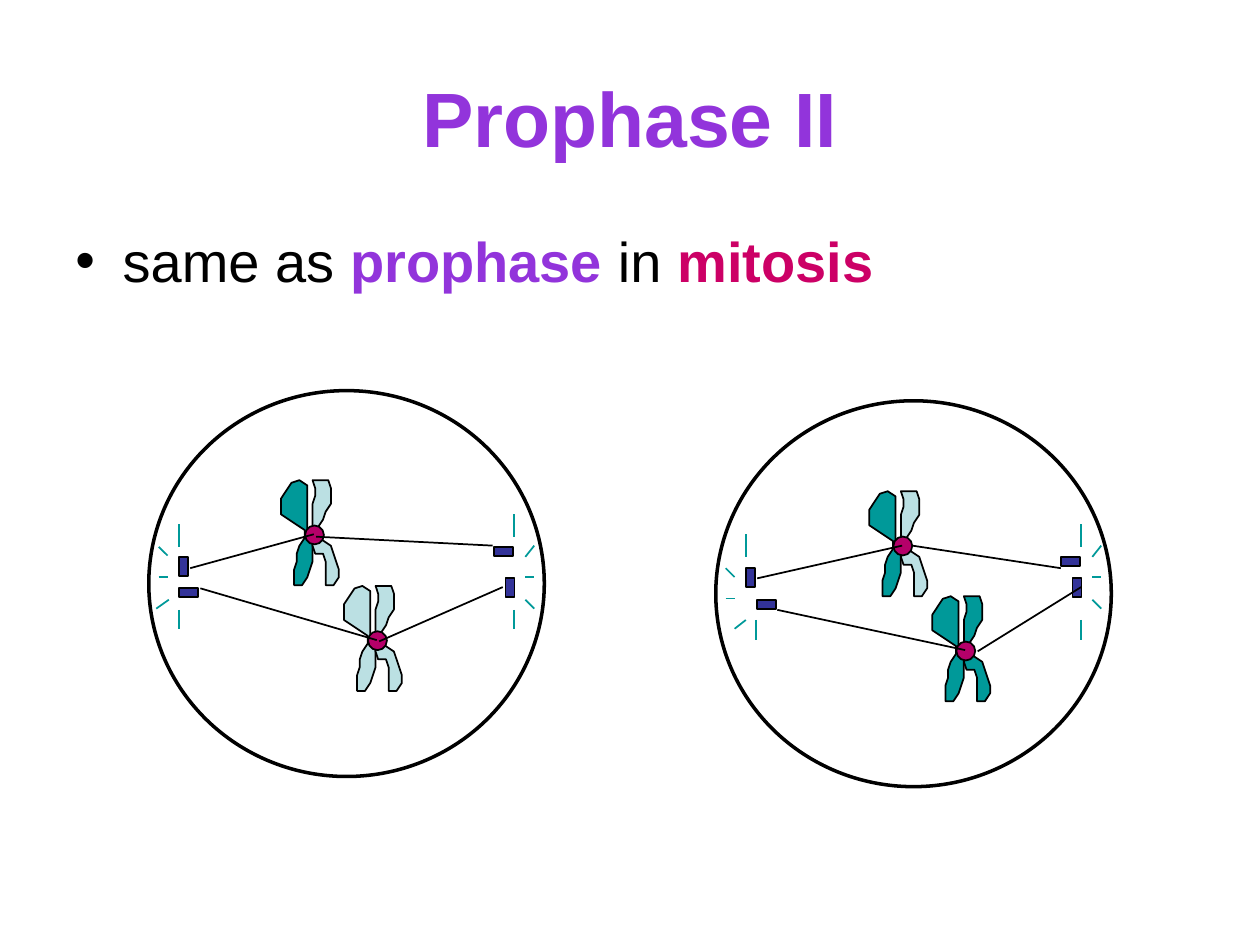
from lxml import etree
from pptx import Presentation
from pptx.dml.color import RGBColor
from pptx.enum import shapes, text
from pptx.oxml import ns
from pptx.util import Pt

FONT = "Arial"
BLACK, PURPLE, PINK = "000000", "9234DB", "CC0066"
TEAL, PALE, MAGENTA, NAVY = "009999", "BBE0E3", "B50069", "333399"

# Chromatid outlines on a grid of 1.5 points, from the chromosome's corner
GRID = 1.5
LEFT_CHROMATID = [
    (13, 21), (10, 20), (10, 2), (7, 0), (4, 1), (0, 7), (0, 13), (9, 19),
    (9, 22), (7, 25), (6, 28), (6, 31), (5, 34), (5, 40), (8, 40), (10, 37),
    (12, 31), (12, 22)]
RIGHT_CHROMATID = [
    (13, 21), (12, 18), (12, 9), (13, 6), (13, 3), (12, 0), (18, 0), (19, 3),
    (19, 9), (17, 12), (16, 15), (14, 18), (13, 21), (19, 25), (22, 34),
    (22, 37), (20, 40), (17, 40), (17, 31), (16, 28), (13, 28), (12, 25),
    (12, 22)]

# Cell contents, in points from the cell's top left corner
CELL_SIZE = (226, 220.5)
LEFT_CELL = {
    "chromosomes": [(111.6, 111.6, PALE, PALE), (75.6, 51.2, TEAL, PALE)],
    "upright": [(203.8, 107.3), (17.2, 95)],
    "flat": [(197.2, 89.3), (17.2, 113)],
    "rays": [
        (208.8, 83.5, 208.8, 70.5), (215.2, 95, 220.3, 88.6),
        (215.2, 106.6, 220.3, 106.6), (215.2, 119.5, 220.3, 124.6),
        (208.8, 125.3, 208.8, 136.1),
        (17.2, 89.3, 17.2, 76.3), (5.7, 89.3, 10.8, 94.3),
        (5.7, 106.6, 10.8, 106.6), (11.5, 119.5, 4.3, 124.6),
        (17.2, 125.3, 17.2, 136.1)],
    "fibres": [
        (23.7, 101.5, 94.3, 82.1), (95.7, 83.5, 196.5, 88.6),
        (29.5, 113, 130.3, 142.6), (131.7, 143.3, 202.3, 112.3)],
}
RIGHT_CELL = {
    "chromosomes": [(87.8, 51.7, TEAL, PALE), (123.8, 111.7, TEAL, TEAL)],
    "upright": [(203.8, 101.5), (17.2, 95.7)],
    "flat": [(197.2, 89.3), (23.7, 113.7)],
    "rays": [
        (208.8, 83.5, 208.8, 70.5), (215.2, 89.2, 220.3, 82.8),
        (215.2, 100.8, 220.3, 100.8), (215.2, 113.7, 220.3, 118.8),
        (208.8, 125.3, 208.8, 136.8),
        (17.2, 89.3, 17.2, 76.3), (5.7, 95.7, 10.8, 100.8),
        (5.7, 113, 10.8, 113), (17.2, 125.3, 10.8, 130.3),
        (23, 125.3, 23, 136.8)],
    "fibres": [
        (23.7, 101.5, 106.5, 82.8), (197.2, 95.7, 112.3, 82.8),
        (35.2, 119.5, 142.5, 142.5), (149.7, 143.2, 208.8, 106.5)],
}


def colour(value):
    return RGBColor.from_string(value)


def add_span(para, words, size, value, bold=False):
    span = para.add_run()
    span.text = words
    span.font.name = FONT
    span.font.size = Pt(size)
    span.font.bold = bold
    span.font.color.rgb = colour(value)


def style(shape, fill=None, width=1):
    shape.shadow.inherit = False
    if fill:
        shape.fill.solid()
        shape.fill.fore_color.rgb = colour(fill)
    else:
        shape.fill.background()
    shape.line.color.rgb = colour(BLACK)
    shape.line.width = Pt(width)


def add_preset(page, kind, box, fill=None, width=1):
    shape = page.shapes.add_shape(kind, *map(Pt, box))
    style(shape, fill, width)


def add_line(page, ends, value):
    line = page.shapes.add_connector(
        shapes.MSO_CONNECTOR.STRAIGHT, *map(Pt, ends))
    line.line.color.rgb = colour(value)
    line.line.width = Pt(1)
    etree.SubElement(line._element.spPr, ns.qn("a:effectLst"))


def add_title(page, box):
    title = page.shapes.title
    title.left, title.top, title.width, title.height = map(Pt, box)
    frame = title.text_frame
    frame.vertical_anchor = text.MSO_ANCHOR.MIDDLE
    para = frame.paragraphs[0]
    para.alignment = text.PP_ALIGN.CENTER
    add_span(para, "Prophase II", 44, PURPLE, True)


def add_body(page, box):
    frame = page.shapes.add_textbox(*map(Pt, box)).text_frame
    frame.word_wrap = True
    para = frame.paragraphs[0]
    para.space_before = Pt(6.4)
    # Bullet with a hanging indent
    props = para._p.get_or_add_pPr()
    props.set("marL", str(Pt(27)))
    props.set("indent", str(Pt(-27)))
    etree.SubElement(props, ns.qn("a:buFont"), typeface=FONT)
    etree.SubElement(props, ns.qn("a:buChar"), char="•")
    add_span(para, "same as ", 32, BLACK)
    add_span(para, "prophase", 32, PURPLE, True)
    add_span(para, " in ", 32, BLACK)
    add_span(para, "mitosis", 32, PINK, True)


def add_chromosome(page, left, top, left_fill, right_fill):
    for outline, fill in ((LEFT_CHROMATID, left_fill),
                          (RIGHT_CHROMATID, right_fill)):
        builder = page.shapes.build_freeform(*outline[0], scale=Pt(GRID))
        builder.add_line_segments(outline[1:], close=True)
        style(builder.convert_to_shape(Pt(left), Pt(top)), fill)
    # Centromere
    add_preset(page, shapes.MSO_SHAPE.OVAL,
               (left + 13.7, top + 25.9, 10.8, 10.8), MAGENTA)


def add_cell(page, box, parts):
    left, top = box[:2]
    for x, y, *fills in parts["chromosomes"]:
        add_chromosome(page, left + x, top + y, *fills)
    # Membrane
    add_preset(page, shapes.MSO_SHAPE.OVAL, box, width=2)
    # Centrioles
    for kind, size in (("upright", (5.2, 10.8)), ("flat", (10.8, 5.2))):
        for x, y in parts[kind]:
            add_preset(page, shapes.MSO_SHAPE.RECTANGLE,
                       (left + x, top + y, *size), NAVY)
    # Aster rays, then spindle fibres
    for kind, value in (("rays", TEAL), ("fibres", BLACK)):
        for x1, y1, x2, y2 in parts[kind]:
            add_line(page, (left + x1, top + y1, left + x2, top + y2), value)


def main():
    deck = Presentation()
    deck.slide_width, deck.slide_height = Pt(720), Pt(540)
    page = deck.slides.add_slide(deck.slide_layouts.get_by_name("Title Only"))
    add_title(page, (36, 21.6, 648, 90))
    add_body(page, (36, 126, 648, 356.4))
    add_cell(page, (85, 223.2, *CELL_SIZE), LEFT_CELL)
    add_cell(page, (409, 229, *CELL_SIZE), RIGHT_CELL)
    deck.save("out.pptx")


if __name__ == "__main__":
    main()
